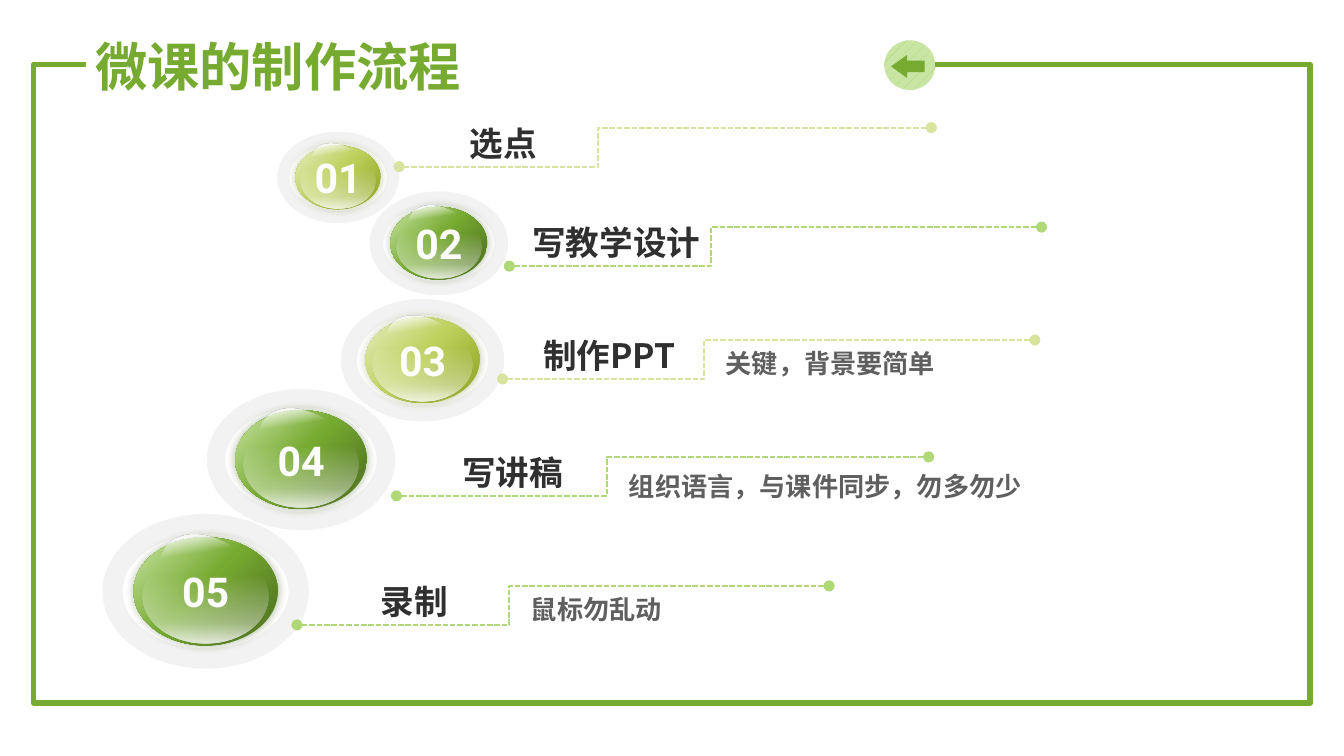
from dataclasses import dataclass
from typing import Optional

from lxml.etree import SubElement
from pptx import Presentation
from pptx.dml.color import RGBColor
from pptx.enum.dml import MSO_LINE as Dash, MSO_PATTERN as Pattern
from pptx.enum.shapes import MSO_CONNECTOR as Link, MSO_SHAPE as Kind
from pptx.enum.text import MSO_ANCHOR as Anchor, PP_ALIGN as Align
from pptx.oxml import parse_xml
from pptx.oxml.ns import nsdecls, qn
from pptx.util import Inches, Pt

COLS, ROWS = 100, 56.25
CELL = Inches(0.1)
RISE, SPAN = 2.9, 39.6
ASPECT = 0.75

GREEN = RGBColor(0x76, 0xAA, 0x30)
LEAF = RGBColor(0xAF, 0xD8, 0x76)
PALE = RGBColor(0xC9, 0xE5, 0xA4)
MOSS = RGBColor(0x58, 0x7F, 0x24)
PINE = RGBColor(0x3B, 0x55, 0x18)
CREAM = RGBColor(0xE5, 0xED, 0xBE)
LIME = RGBColor(0xBE, 0xD1, 0x5D)
OLIVE = RGBColor(0x9C, 0xB0, 0x32)
BARK = RGBColor(0x68, 0x76, 0x21)
STRAW = RGBColor(0xD8, 0xE3, 0x9E)
WHITE = RGBColor(0xFF, 0xFF, 0xFF)
SNOW = RGBColor(0xFD, 0xFD, 0xFD)
MIST = RGBColor(0xF2, 0xF2, 0xF2)
INK = RGBColor(0x30, 0x30, 0x30)
GREY = RGBColor(0x5F, 0x5F, 0x5F)

ROBOTO, NOTO = "Roboto", "Noto Sans CJK SC"
RADIAL = '<a:path path="circle"><a:fillToRect r="100000" b="100000"/></a:path>'
SHINE = ((0, WHITE, 0), (16, WHITE, 87), (30, WHITE, 0))
GLOSS = ((28, WHITE, 0), (78, WHITE, 41), (98, WHITE, 79))


@dataclass(frozen=True)
class Tone:
    """Colours shared by a ball and its line."""
    stops: tuple
    shade: RGBColor
    line: RGBColor


@dataclass(frozen=True)
class Step:
    """One stage: ring centre and width, line start and bend, words."""
    x: float
    y: float
    wide: float
    left: float
    base: float
    bend: float
    tone: Tone
    label: str
    note: Optional[str] = None
    room: float = 0
    lead: float = 1.0


FRESH = Tone(((0, CREAM, 100), (47, LIME, 100), (82, OLIVE, 100)), BARK, STRAW)
DEEP = Tone(((0, PALE, 100), (47, GREEN, 100), (82, MOSS, 100)), PINE, LEAF)

STEPS = (
    Step(25.15, 13.2, 9.05, 29.7, 12.4, 44.5, FRESH, "选点"),
    Step(32.65, 18.1, 10.3, 37.9, 19.8, 52.9, DEEP, "写教学设计"),
    Step(31.45, 26.8, 12.15, 37.4, 28.2, 52.4, FRESH, "制作PPT",
         "关键，背景要简单", 24.7),
    Step(22.4, 34.2, 14, 29.5, 36.9, 45.2, DEEP, "写讲稿",
         "组织语言，与课件同步，勿多勿少", 33.3, 1.2),
    Step(15.3, 44, 15.35, 22.1, 46.5, 37.9, DEEP, "录制",
         "鼠标勿乱动", 23.5),
)


def cells(*sizes: float) -> list[int]:
    """Turn grid cells into slide units."""
    return [round(size * CELL) for size in sizes]


def write(shape, text: str, *, size: float, color: RGBColor, font: str = NOTO,
          align=Align.CENTER, anchor=Anchor.MIDDLE, lead: float = 1.0,
          inset: tuple = (1, 0.5, 1, 0.5)) -> None:
    """Put one bold paragraph into a shape."""
    frame = shape.text_frame
    frame.word_wrap = True
    frame.vertical_anchor = anchor
    (frame.margin_left, frame.margin_top,
     frame.margin_right, frame.margin_bottom) = cells(*inset)
    para = frame.paragraphs[0]
    para.alignment, para.line_spacing = align, lead
    run = para.add_run()
    run.text = text
    run.font.size, run.font.bold, run.font.name = Pt(size), True, font
    run.font.color.rgb = color
    SubElement(run.font._element, qn("a:ea"), typeface=NOTO)


def draw(slide, kind, x: float, y: float, w: float, h: float,
         fill: Optional[RGBColor] = None):
    """Add a plain preset shape without outline."""
    shape = slide.shapes.add_shape(kind, *cells(x, y, w, h))
    shape.shadow.inherit = False
    shape.line.fill.background()
    if fill is None:
        shape.fill.background()
    else:
        shape.fill.solid()
        shape.fill.fore_color.rgb = fill
    return shape


def blend(shape, stops: tuple, mode: str) -> None:
    """Fill a shape with a gradient."""
    marks = "".join(
        f'<a:gs pos="{pos * 1000}"><a:srgbClr val="{color}">'
        f'<a:alpha val="{alpha * 1000}"/></a:srgbClr></a:gs>'
        for pos, color, alpha in stops)
    props = shape._element.spPr
    props.replace(props.find(qn("a:noFill")), parse_xml(
        f'<a:gradFill {nsdecls("a")} rotWithShape="1">'
        f'<a:gsLst>{marks}</a:gsLst>{mode}</a:gradFill>'))


def oval(slide, x: float, y: float, w: float, h: float, stops: tuple, mode: str):
    """Add a gradient ellipse around a centre."""
    shape = draw(slide, Kind.OVAL, x - w / 2, y - h / 2, w, h)
    blend(shape, stops, mode)
    return shape


def ring(slide, step: Step) -> None:
    """Draw the pale ring around a ball."""
    w, h = step.wide, step.wide * ASPECT
    band = draw(slide, Kind.DONUT, step.x - w / 2, step.y - h / 2, w, h, MIST)
    band.adjustments[0] = 0.13


def ball(slide, step: Step, mark: str) -> None:
    """Draw the numbered glass ball with its two highlights."""
    w = step.wide * 0.7
    h = w * ASPECT
    shape = oval(slide, step.x, step.y, w, h, step.tone.stops, RADIAL)
    glow = shape._element.spPr.find(qn("a:effectLst"))
    glow.append(parse_xml(
        f'<a:outerShdw {nsdecls("a")} blurRad="{Pt(5)}" dist="0" dir="0">'
        f'<a:srgbClr val="{step.tone.shade}"><a:alpha val="40000"/>'
        '</a:srgbClr></a:outerShdw>'))
    write(shape, mark, size=22, color=SNOW, font=ROBOTO, inset=(0, 0.5, 0, 0.5))
    shine = oval(slide, step.x + w * 0.05, step.y - h * 0.08, w * 0.82, h * 0.75,
                 SHINE, '<a:lin ang="2700000" scaled="0"/>')
    shine.rotation = 35.7
    oval(slide, step.x, step.y + h * 0.05, w * 0.87, h * 0.87,
         GLOSS, '<a:lin ang="5400000" scaled="0"/>')


def route(slide, step: Step) -> None:
    """Draw the dashed elbow line with round ends."""
    link = slide.shapes.add_connector(Link.ELBOW, *cells(
        step.left, step.base, step.left + SPAN, step.base - RISE))
    link.line.color.rgb = step.tone.line
    link.line.width, link.line.dash_style = Pt(1), Dash.SQUARE_DOT
    props = link._element.spPr
    ratio = round((step.bend - step.left) / SPAN * 100000)
    SubElement(props.find(qn("a:prstGeom")).find(qn("a:avLst")), qn("a:gd"),
               name="adj1", fmla=f"val {ratio}")
    for end in ("a:headEnd", "a:tailEnd"):
        SubElement(props.find(qn("a:ln")), qn(end), type="oval")
    SubElement(props, qn("a:effectLst"))


def words(slide, step: Step) -> None:
    """Write the label and the note of a step."""
    label = slide.shapes.add_textbox(
        *cells(step.bend - 14.55, step.base - 3.4, 15, 3.3))
    write(label, step.label, size=18, color=INK)
    if step.note:
        note = slide.shapes.add_textbox(
            *cells(step.bend, step.base - 2.85, step.room, 5.4))
        write(note, step.note, size=14, color=GREY, align=Align.JUSTIFY,
              anchor=Anchor.TOP, lead=step.lead, inset=(1.6, 0.5, 1, 0.5))


def border(slide) -> None:
    """Draw the frame, the back button and the title."""
    edge = draw(slide, Kind.RECTANGLE, 2.5, 4.8, COLS - 5, 47.5)
    edge.line.color.rgb, edge.line.width = GREEN, Pt(3)
    disc = draw(slide, Kind.OVAL, 65.8, 3, 3.8, 3.7)
    disc.fill.patterned()
    disc.fill.pattern = Pattern.PERCENT_20
    disc.fill.fore_color.rgb, disc.fill.back_color.rgb = LEAF, PALE
    arrow = draw(slide, Kind.LEFT_ARROW, 66.3, 4.1, 2.5, 1.7, GREEN)
    arrow.adjustments[0], arrow.adjustments[1] = 0.5, 0.7
    title = draw(slide, Kind.RECTANGLE, 6.4, 2.6, 59.4, 5.2, WHITE)
    write(title, "微课的制作流程", size=28, color=GREEN, font=ROBOTO,
          align=Align.LEFT, lead=0.9, inset=(0.7, 0.4, 0.7, 0.4))


def main() -> None:
    """Build and save the slide."""
    deck = Presentation()
    deck.slide_width, deck.slide_height = cells(COLS, ROWS)
    slide = deck.slides.add_slide(deck.slide_layouts[6])
    border(slide)
    for count, step in enumerate(STEPS, 1):
        ring(slide, step)
        ball(slide, step, f"{count:02}")
        route(slide, step)
        words(slide, step)
    deck.save("out.pptx")


if __name__ == "__main__":
    main()
